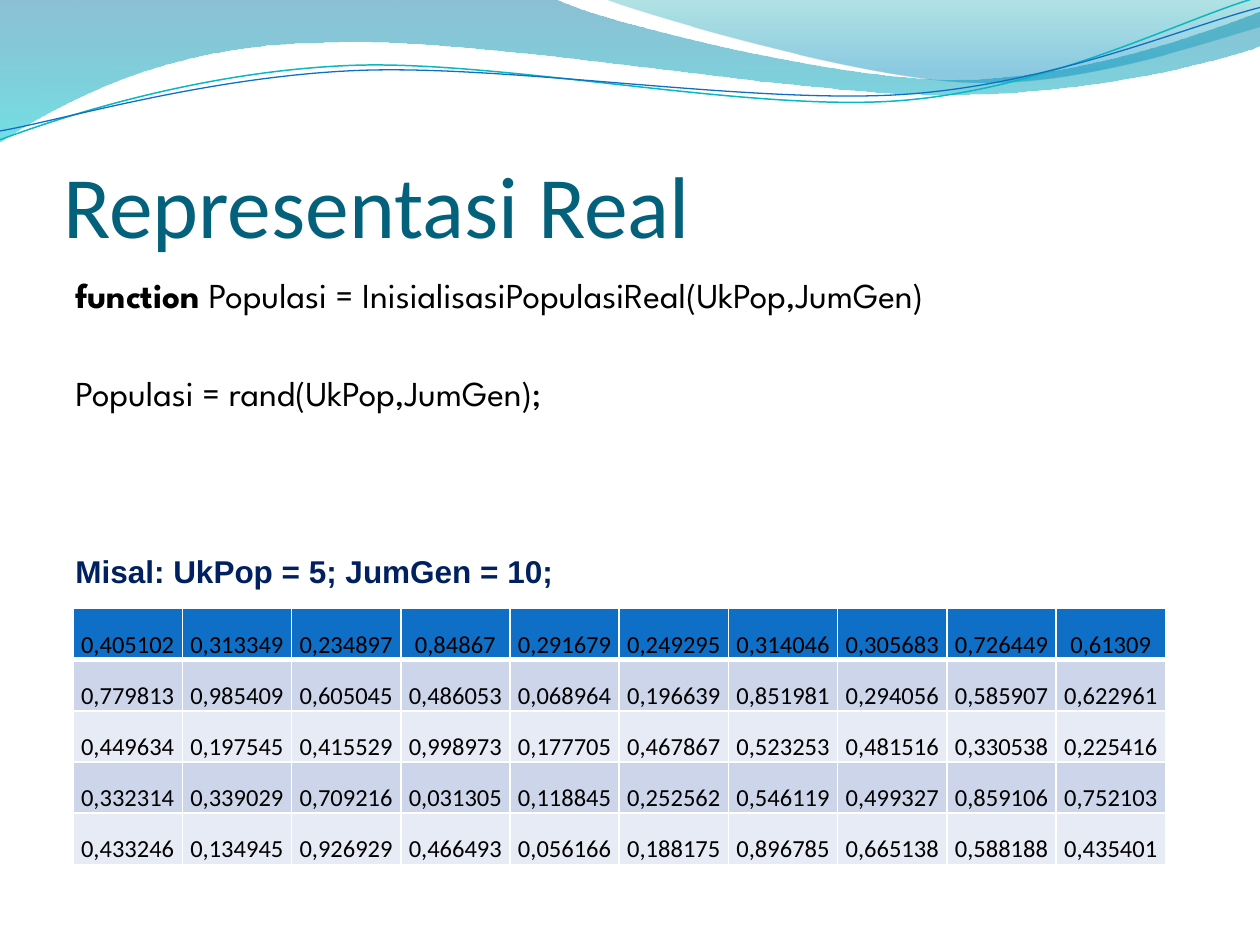
import math

from lxml import etree
from pptx import Presentation, util as u
from pptx.dml import color
from pptx.enum import text
from pptx.oxml import ns


def rgb(value):
    return color.RGBColor.from_string(value)


def turn(point, degrees):
    x, y = point
    angle = math.radians(degrees)
    return (x * math.cos(angle) - y * math.sin(angle),
            x * math.sin(angle) + y * math.cos(angle))


class SlideBuilder:
    heading_font = "Calibri"
    code_font = "League Spartan"
    note_font = "Arial"
    heading_color = "04617B"
    black = "000000"
    white = "FFFFFF"
    header_fill = "0F6FC6"
    band_fills = ("E7EBF5", "CCD5EA")
    tilt = 2.7
    hanging = u.Inches(0.3)

    def __init__(self, deck):
        self.page = deck.slides.add_slide(deck.slide_layouts[5])

    def outline(self, start, segments, close):
        points = [(u.Inches(x), u.Inches(y)) for segment in segments for x, y in segment]
        builder = self.page.shapes.build_freeform(*map(u.Inches, start))
        builder.add_line_segments(points, close=close)
        shape = builder.convert_to_shape()
        shape.shadow.inherit = False
        knots = iter(list(shape.element.iter(ns.qn("a:lnTo"))))
        for segment in segments:
            first, *others = [next(knots) for _ in segment]
            if others:
                first.tag = ns.qn("a:cubicBezTo")
            for knot in others:
                first.append(knot[0])
                knot.getparent().remove(knot)
        return shape

    def wave(self, start, segments, stops):
        shape = self.outline(start, segments, True)
        shape.line.fill.background()
        shape.fill.gradient()
        shape.fill.gradient_angle = 270
        for stop, (position, shade, _) in zip(shape.fill.gradient_stops, stops):
            stop.position = position
            stop.color.rgb = rgb(shade)
        shades = shape.element.iter(ns.qn("a:srgbClr"))
        for shade, (_, _, opacity) in zip(shades, stops):
            etree.SubElement(shade, ns.qn("a:alpha"), val=str(opacity * 1000))

    def strand(self, start, segments, shade, width):
        level = [[turn(point, self.tilt) for point in segment] for segment in segments]
        shape = self.outline(turn(start, self.tilt), level, False)
        middle = (shape.left + shape.width / 2, shape.top + shape.height / 2)
        x, y = turn(middle, -self.tilt)
        shape.left = round(x - shape.width / 2)
        shape.top = round(y - shape.height / 2)
        shape.rotation = 360 - self.tilt
        shape.fill.background()
        shape.line.color.rgb = rgb(shade)
        shape.line.width = u.Pt(width)

    def span(self, para, words, size, font, shade, bold=False):
        span = para.add_run()
        span.text = words
        span.font.size = u.Pt(size)
        span.font.name = font
        span.font.bold = bold
        span.font.color.rgb = rgb(shade)

    def title(self, words, left, top, width, height):
        box = self.page.shapes.title
        box.element.getparent().append(box.element)
        box.left, box.top = u.Inches(left), u.Inches(top)
        box.width, box.height = u.Inches(width), u.Inches(height)
        frame = box.text_frame
        frame.auto_size = text.MSO_AUTO_SIZE.NONE
        frame.vertical_anchor = text.MSO_ANCHOR.BOTTOM
        frame.margin_left = frame.margin_right = frame.margin_bottom = 0
        frame.margin_top = u.Inches(0.05)
        para = frame.paragraphs[0]
        para.alignment = text.PP_ALIGN.LEFT
        self.span(para, words, 50, self.heading_font, self.heading_color)

    def text_box(self, left, top, width, height, wrap=True):
        box = self.page.shapes.add_textbox(
            u.Inches(left), u.Inches(top), u.Inches(width), u.Inches(height))
        box.text_frame.word_wrap = wrap
        return box.text_frame

    def code(self, lines, left, top, width, height):
        frame = self.text_box(left, top, width, height)
        for index, (space, spans) in enumerate(lines):
            para = frame.add_paragraph() if index else frame.paragraphs[0]
            para.space_before = u.Pt(space)
            layout = para._p.get_or_add_pPr()
            layout.set("marL", str(self.hanging))
            layout.set("indent", str(-self.hanging))
            for words, bold in spans:
                self.span(para, words, 20, self.code_font, self.black, bold)

    def note(self, words, left, top, width, height):
        frame = self.text_box(left, top, width, height, wrap=False)
        frame.auto_size = text.MSO_AUTO_SIZE.SHAPE_TO_FIT_TEXT
        self.span(frame.paragraphs[0], words, 18, self.note_font, "002060", True)

    def border(self, cell, side, width):
        line = etree.SubElement(cell._tc.get_or_add_tcPr(), ns.qn("a:ln" + side),
                                w=str(u.Pt(width)))
        fill = etree.SubElement(line, ns.qn("a:solidFill"))
        etree.SubElement(fill, ns.qn("a:srgbClr"), val=self.white)

    def table(self, rows, left, top, width, height):
        grid = self.page.shapes.add_table(
            len(rows), len(rows[0]), u.Inches(left), u.Inches(top),
            u.Inches(width), u.Inches(height)).table
        for row, values in enumerate(rows):
            for column, value in enumerate(values):
                cell = grid.cell(row, column)
                for side in "LRTB":
                    heavy = (row, side) in ((0, "B"), (1, "T"))
                    self.border(cell, side, 3 if heavy else 1)
                cell.fill.solid()
                cell.fill.fore_color.rgb = rgb(
                    self.band_fills[row % 2] if row else self.header_fill)
                cell.margin_left = cell.margin_right = cell.margin_top = u.Inches(0.01)
                cell.margin_bottom = 0
                cell.vertical_anchor = text.MSO_ANCHOR.BOTTOM
                para = cell.text_frame.paragraphs[0]
                para.alignment = text.PP_ALIGN.CENTER
                self.span(para, value, 14, self.heading_font, self.black)


POPULATION = [line.split() for line in (
    "0,405102 0,313349 0,234897 0,84867 0,291679 0,249295 0,314046 0,305683 0,726449 0,61309",
    "0,779813 0,985409 0,605045 0,486053 0,068964 0,196639 0,851981 0,294056 0,585907 0,622961",
    "0,449634 0,197545 0,415529 0,998973 0,177705 0,467867 0,523253 0,481516 0,330538 0,225416",
    "0,332314 0,339029 0,709216 0,031305 0,118845 0,252562 0,546119 0,499327 0,859106 0,752103",
    "0,433246 0,134945 0,926929 0,466493 0,056166 0,188175 0,896785 0,665138 0,588188 0,435401",
)]


def main():
    deck = Presentation()
    deck.slide_width, deck.slide_height = u.Inches(10), u.Inches(7.5)
    slide = SlideBuilder(deck)

    slide.wave((0, -0.01), [
        [(4.4, -0.01)],
        [(4.76, 0.17), (6.64, 0.63), (7.58, 0.63)],
        [(8.53, 0.63), (9.58, 0.26), (10, 0.09)],
        [(10.01, 0.36)],
        [(9.83, 0.44), (8.7, 0.76), (7.46, 0.75)],
        [(6.22, 0.75), (3.82, 0.28), (2.57, 0.34)],
        [(1.29, 0.35), (0.46, 0.83), (-0.01, 1.13)],
    ], [(0, "0074A1", 45), (1, "00C6CF", 55)])
    slide.wave((4.79, -0.01), [
        [(5.09, 0.11), (6.82, 0.62), (7.69, 0.65)],
        [(8.56, 0.69), (9.61, 0.32), (10, 0.21)],
        [(10, 0)],
    ], [(0, "00A1A9", 30), (0.8, "008BBF", 45)])
    slide.strand((0, 1.11), [
        [(0.48, 0.93), (1.58, 0.57), (2.77, 0.52)],
        [(3.95, 0.47), (5.93, 0.89), (7.13, 0.8)],
        [(8.33, 0.71), (9.38, 0.15), (9.98, -0.02)],
    ], "0AB8BF", 0.85)
    slide.strand((0, 1.04), [
        [(0.47, 0.96), (1.64, 0.61), (2.83, 0.56)],
        [(4.03, 0.51), (5.97, 0.83), (7.17, 0.75)],
        [(8.36, 0.67), (9.41, 0.21), (10, 0.06)],
    ], "0F6FC6", 0.75)

    slide.title("Representasi Real", 0.5, 0.78, 9, 1.25)
    slide.code([
        (3, [("function", True),
             (" Populasi = InisialisasiPopulasiReal(UkPop,JumGen)", False)]),
        (32, [("Populasi = rand(UkPop,JumGen);", False)]),
    ], 0.5, 2.12, 9, 4.8)
    slide.table(POPULATION, 0.58, 4.83, 8.67, 2.03)
    slide.note("Misal: UkPop = 5; JumGen = 10;", 0.5, 4.33, 4.03, 0.4)
    deck.save("out.pptx")


if __name__ == "__main__":
    main()
